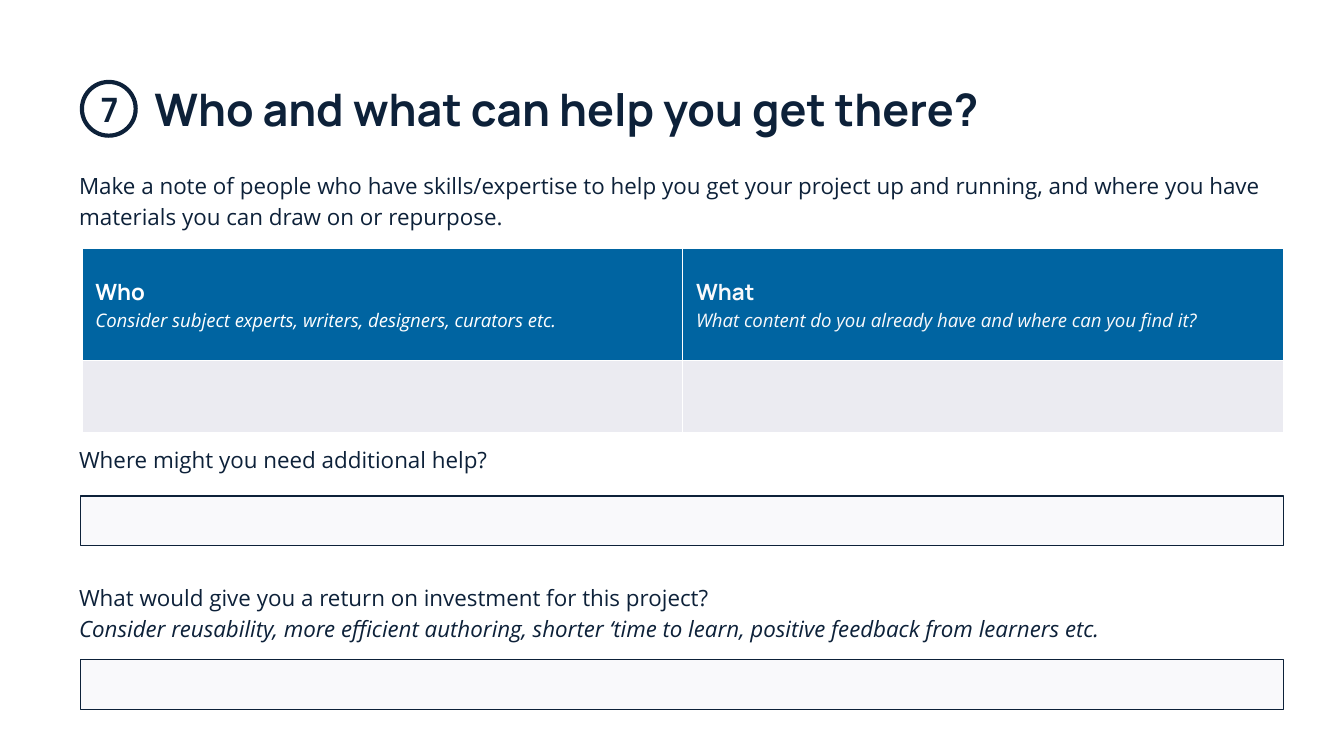
from lxml import etree
from pptx import Presentation
from pptx.dml.color import RGBColor
from pptx.enum.shapes import MSO_SHAPE
from pptx.enum.text import MSO_ANCHOR, PP_ALIGN
from pptx.oxml.ns import qn
from pptx.util import Inches, Pt

RECT, OVAL = MSO_SHAPE.RECTANGLE, MSO_SHAPE.OVAL
LEFT, CENTER = PP_ALIGN.LEFT, PP_ALIGN.CENTER
MIDDLE = MSO_ANCHOR.MIDDLE

THEME = {
    "ink": RGBColor(0x0D, 0x21, 0x39),
    "blue": RGBColor(0x00, 0x64, 0xA1),
    "white": RGBColor(0xFF, 0xFF, 0xFF),
    "pale": RGBColor(0xF9, 0xF9, 0xFB),
    "grey": RGBColor(0xEB, 0xEB, 0xF1),
    "heading": "Manrope", "body": "Open Sans",
    "title_pt": Pt(24), "number_pt": Pt(18), "text_pt": Pt(12), "hint_pt": Pt(10),
}
TITLE = {"name": THEME["heading"], "size": THEME["title_pt"], "bold": True}
NUMBER = {**TITLE, "size": THEME["number_pt"]}
LABEL = {**TITLE, "size": THEME["text_pt"]}
BODY = {"name": THEME["body"], "size": THEME["text_pt"]}
BODY_HINT = {**BODY, "italic": True}
CELL_HINT = {**BODY_HINT, "size": THEME["hint_pt"]}


def fill_text(tf, lines, color, align=LEFT, spacing=None):
    """Write one paragraph for each (text, format, points before)."""
    tf.word_wrap = True
    for side in ("left", "top", "right", "bottom"):
        setattr(tf, f"margin_{side}", Inches(0.1))
    for i, (text, fmt, before) in enumerate(lines):
        p = tf.paragraphs[0] if i == 0 else tf.add_paragraph()
        p.alignment = align
        p.line_spacing = spacing
        p.space_before = Pt(before)
        r = p.add_run()
        r.text = text
        r.font.color.rgb = color
        for key, value in fmt.items():
            setattr(r.font, key, value)


prs = Presentation()
prs.slide_width = Inches(10)
prs.slide_height = prs.slide_width * 9 // 16
s = prs.slides.add_slide(prs.slide_layouts[6])

# Title, body text with gaps for the table and answer box, and step number
texts = [
    (1.05, 0.51, 6.89, 0.61, LEFT, None,
     [("Who and what can help you get there?", TITLE, 0)]),
    (0.49, 1.15, 9.07, 3.74, LEFT, 1.15,
     [("Make a note of people who have skills/expertise to help you get your project "
       "up and running, and where you have materials you can draw on or repurpose.", BODY, 0),
      ("Where might you need additional help?", BODY, 114),
      ("What would give you a return on investment for this project?", BODY, 57),
      ("Consider reusability, more efficient authoring, shorter ‘time to learn, "
       "positive feedback from learners etc.", BODY_HINT, 0)]),
    (0.65, 0.56, 0.31, 0.4, CENTER, None, [("7", NUMBER, 0)]),
]
for x, y, w, h, align, spacing, lines in texts:
    box = s.shapes.add_textbox(Inches(x), Inches(y), Inches(w), Inches(h))
    fill_text(box.text_frame, lines, THEME["ink"], align, spacing)

# Number ring and answer boxes
for kind, x, y, w, h, fill, line in [
    (OVAL, 0.61, 0.61, 0.4, 0.4, None, 2.25),
    (RECT, 0.6, 3.69, 8.95, 0.37, THEME["pale"], 0.75),
    (RECT, 0.6, 4.91, 8.95, 0.37, THEME["pale"], 0.75),
]:
    sp = s.shapes.add_shape(kind, Inches(x), Inches(y), Inches(w), Inches(h))
    sp.shadow.inherit = False
    if fill is None:
        sp.fill.background()
    else:
        sp.fill.solid()
        sp.fill.fore_color.rgb = fill
    sp.line.color.rgb = THEME["ink"]
    sp.line.width = Pt(line)

# Who / What table
table = s.shapes.add_table(2, 2, Inches(0.61), Inches(1.85), Inches(8.94), Inches(1.37)).table
for row, height in zip(table.rows, (0.83, 0.54)):
    row.height = Inches(height)
headers = [
    ("Who", "Consider subject experts, writers, designers, curators etc.", THEME["white"]),
    ("What", "What content do you already have and where can you find it?", THEME["pale"]),
]
for col, (label, hint, color) in enumerate(headers):
    cell = table.cell(0, col)
    fill_text(cell.text_frame, [(label, LABEL, 0), (hint, CELL_HINT, 0)], color)
    cell.vertical_anchor = MIDDLE
    for row, fill in enumerate((THEME["blue"], THEME["grey"])):
        cell = table.cell(row, col)
        # Borders come before the fill in the cell properties
        tc_pr = cell._tc.get_or_add_tcPr()
        for edge in ("a:lnL", "a:lnR", "a:lnT", "a:lnB"):
            ln = etree.SubElement(tc_pr, qn(edge), w=str(Pt(0.75)))
            solid = etree.SubElement(ln, qn("a:solidFill"))
            etree.SubElement(solid, qn("a:srgbClr"), val=str(THEME["white"]))
        cell.fill.solid()
        cell.fill.fore_color.rgb = fill

prs.save("out.pptx")
